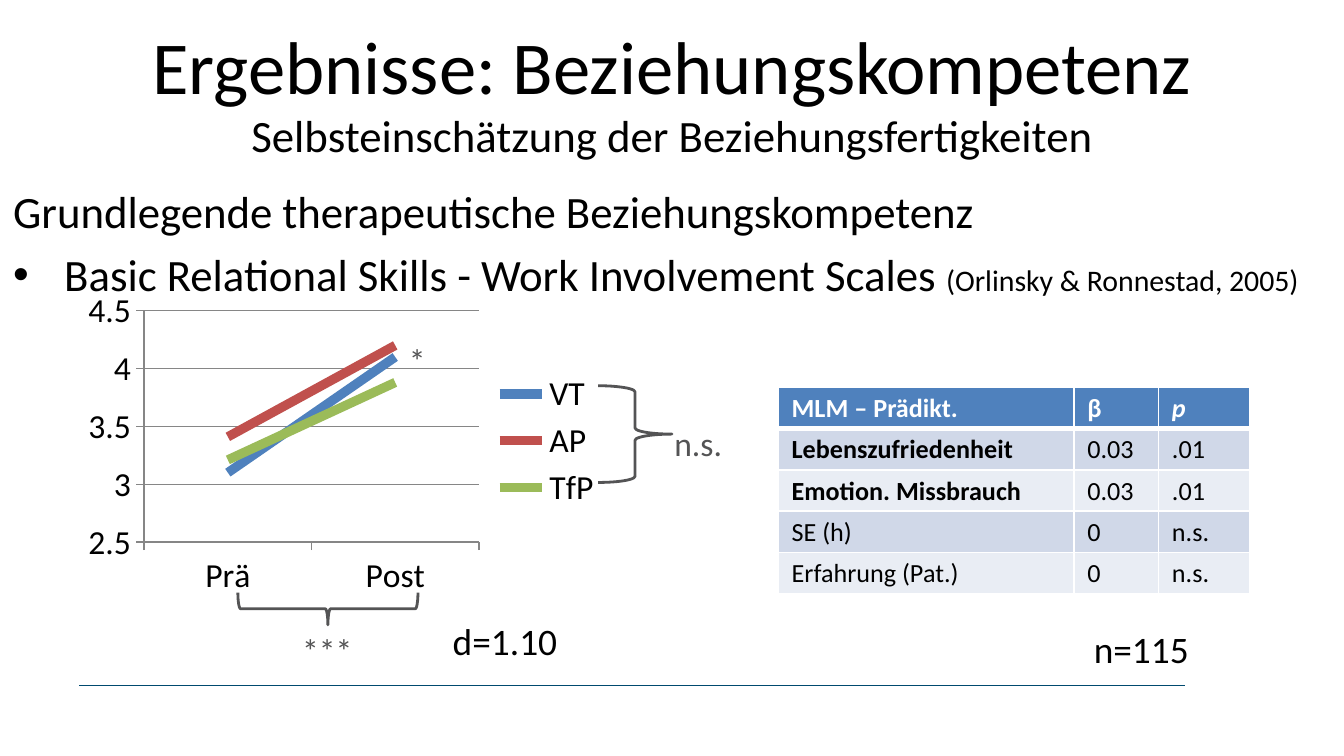
from dataclasses import dataclass

from lxml import etree
from pptx import Presentation
from pptx.chart.data import CategoryChartData
from pptx.dml.color import RGBColor
from pptx.enum.chart import XL_CHART_TYPE, XL_LEGEND_POSITION, XL_MARKER_STYLE, XL_TICK_MARK
from pptx.enum.shapes import MSO_CONNECTOR, MSO_SHAPE
from pptx.enum.text import PP_ALIGN
from pptx.oxml.ns import qn
from pptx.util import Inches, Pt

LINE_CHART = XL_CHART_TYPE.LINE
LEGEND_RIGHT = XL_LEGEND_POSITION.RIGHT
NO_MARKER = XL_MARKER_STYLE.NONE
TICK_OUT = XL_TICK_MARK.OUTSIDE
STRAIGHT = MSO_CONNECTOR.STRAIGHT
RIGHT_BRACE = MSO_SHAPE.RIGHT_BRACE
LEFT, CENTER = PP_ALIGN.LEFT, PP_ALIGN.CENTER


@dataclass(frozen=True)
class Theme:
    font: str = "Calibri"
    black: str = "000000"
    white: str = "FFFFFF"
    grey: str = "545455"
    axis: str = "868686"
    rule: str = "004A6F"
    header: str = "4F81BD"
    bands: tuple = ("D0D8E8", "E9EDF4")
    title: float = 40
    body: float = 24
    note: float = 20
    label: float = 18
    source: float = 16
    table: float = 14


THEME = Theme()


@dataclass(frozen=True)
class Box:
    left: float
    top: float
    width: float
    height: float

    def lengths(self) -> tuple:
        return tuple(Inches(v) for v in (self.left, self.top, self.width, self.height))


@dataclass(frozen=True)
class Phrase:
    text: str
    size: float
    color: str = THEME.black
    new_line: bool = False


@dataclass(frozen=True)
class Label:
    box: Box
    phrase: Phrase
    align: int = CENTER
    wrap: bool = True


@dataclass(frozen=True)
class Brace:
    box: Box
    rotation: float


@dataclass(frozen=True)
class Series:
    name: str
    values: tuple
    color: str


@dataclass(frozen=True)
class Predictor:
    name: str
    beta: str
    p: str
    bold: bool = False


SERIES = (
    Series("VT", (3.1, 4.1), "4F81BD"),
    Series("AP", (3.41, 4.2), "C0504D"),
    Series("TfP", (3.21, 3.88), "9BBB59"),
)
PREDICTORS = (
    Predictor("Lebenszufriedenheit", "0.03", ".01", True),
    Predictor("Emotion. Missbrauch", "0.03", ".01", True),
    Predictor("SE (h)", "0", "n.s."),
    Predictor("Erfahrung (Pat.)", "0", "n.s."),
)
BRACES = (
    Brace(Box(2.32, 3.86, 0.24, 1.34), 90),
    Brace(Box(4.45, 2.87, 0.55, 0.72), 0),
)
LABELS = (
    Label(Box(1.61, 4.64, 1.65, 0.4), Phrase("***", THEME.label, THEME.grey)),
    Label(Box(4.84, 3.1, 0.71, 0.4), Phrase("n.s.", THEME.label, THEME.grey)),
    Label(Box(2.83, 2.48, 0.55, 0.4), Phrase("*", THEME.label, THEME.grey)),
    Label(Box(3.27, 4.55, 0.99, 0.44), Phrase("d=1.10", THEME.note), LEFT, False),
    Label(Box(8.04, 4.61, 1.1, 0.44), Phrase("n=115", THEME.note), LEFT),
)


def rgb(color: str) -> RGBColor:
    return RGBColor.from_string(color)


def apply(target, values: dict) -> None:
    for name, value in values.items():
        setattr(target, name, value)


def style_font(font, size: float, color: str, **extra) -> None:
    apply(font, {"name": THEME.font, "size": Pt(size), **extra})
    font.color.rgb = rgb(color)


def style_line(line, color: str, width: float) -> None:
    line.color.rgb = rgb(color)
    line.width = Pt(width)


def write(paragraph, *phrases: Phrase) -> None:
    for phrase in phrases:
        if phrase.new_line:
            paragraph.add_line_break()
        run = paragraph.add_run()
        run.text = phrase.text
        style_font(run.font, phrase.size, phrase.color)


def add_text_frame(slide, box: Box, wrap: bool = True):
    frame = slide.shapes.add_textbox(*box.lengths()).text_frame
    frame.word_wrap = wrap
    return frame


def add_heading(slide) -> None:
    paragraph = add_text_frame(slide, Box(0.5, 0.15, 9, 0.94)).paragraphs[0]
    apply(paragraph, {"alignment": CENTER, "line_spacing": 0.95})
    write(paragraph, Phrase("Ergebnisse: Beziehungskompetenz", THEME.title),
          Phrase("Selbsteinschätzung der Beziehungsfertigkeiten", THEME.body, new_line=True))


def add_body(slide) -> None:
    frame = add_text_frame(slide, Box(0, 1.32, 10, 3.93))
    write(frame.paragraphs[0], Phrase("Grundlegende therapeutische Beziehungskompetenz", THEME.body))
    scale = frame.add_paragraph()
    scale.space_before = Pt(4.8)
    properties = scale._p.get_or_add_pPr()
    properties.set("marL", str(Inches(0.38)))
    properties.set("indent", str(-Inches(0.38)))
    etree.SubElement(properties, qn("a:buFont"), typeface="Arial")
    etree.SubElement(properties, qn("a:buChar"), char="•")
    write(scale, Phrase("Basic Relational Skills - Work Involvement Scales ", THEME.body),
          Phrase("(Orlinsky & Ronnestad, 2005)", THEME.source))


def place_inside(part, index: int, area: Box, inner: bool = False) -> None:
    for old in part.findall(qn("c:layout")):
        part.remove(old)
    layout = etree.Element(qn("c:layout"))
    manual = etree.SubElement(layout, qn("c:manualLayout"))
    settings = {"layoutTarget": "inner"} if inner else {}
    settings |= {"xMode": "edge", "yMode": "edge", "x": area.left, "y": area.top,
                 "w": area.width, "h": area.height}
    for name, value in settings.items():
        etree.SubElement(manual, qn(f"c:{name}"), val=str(value))
    part.insert(index, layout)


def add_skill_chart(slide, box: Box) -> None:
    data = CategoryChartData()
    data.categories = ("Prä", "Post")
    for series in SERIES:
        data.add_series(series.name, series.values)
    chart = slide.shapes.add_chart(LINE_CHART, *box.lengths(), data).chart
    apply(chart, {"has_title": False, "has_legend": True})
    style_font(chart.font, THEME.label, THEME.black)
    apply(chart.legend, {"position": LEGEND_RIGHT, "include_in_layout": False})
    apply(chart.value_axis, {"minimum_scale": 2.5, "maximum_scale": 4.5, "major_unit": 0.5,
                             "has_major_gridlines": True})
    for axis in (chart.category_axis, chart.value_axis):
        axis.major_tick_mark = TICK_OUT
        style_line(axis.format.line, THEME.axis, 0.75)
    style_line(chart.value_axis.major_gridlines.format.line, THEME.axis, 0.75)
    chart.plots[0].vary_by_categories = False
    for drawn, series in zip(chart.plots[0].series, SERIES):
        drawn.smooth = False
        drawn.marker.style = NO_MARKER
        style_line(drawn.format.line, series.color, 5)
    plot_area = chart._chartSpace.find(".//" + qn("c:plotArea"))
    place_inside(plot_area, 0, Box(0.12, 0.09, 0.62, 0.73), inner=True)
    place_inside(chart.legend._element, 1, Box(0.75, 0.27, 0.23, 0.46))


def add_brace(slide, brace: Brace) -> None:
    shape = slide.shapes.add_shape(RIGHT_BRACE, *brace.box.lengths())
    shape.rotation = brace.rotation
    shape.shadow.inherit = False
    shape.fill.background()
    style_line(shape.line, THEME.grey, 1.5)


def add_label(slide, label: Label) -> None:
    paragraph = add_text_frame(slide, label.box, label.wrap).paragraphs[0]
    paragraph.alignment = label.align
    write(paragraph, label.phrase)


def fill_cell(cell, text: str, fill: str, color: str, top: float, bottom: float, **extra) -> None:
    apply(cell, {"margin_left": Inches(0.1), "margin_right": Inches(0.1),
                 "margin_top": Inches(0.04), "margin_bottom": Inches(0.03)})
    run = cell.text_frame.paragraphs[0].add_run()
    run.text = text
    style_font(run.font, THEME.table, color, **extra)
    properties = cell._tc.get_or_add_tcPr()
    for side, width in {"L": 1, "R": 1, "T": top, "B": bottom}.items():
        border = etree.SubElement(properties, qn(f"a:ln{side}"), w=str(Pt(width)))
        solid = etree.SubElement(border, qn("a:solidFill"))
        etree.SubElement(solid, qn("a:srgbClr"), val=THEME.white)
    cell.fill.solid()
    cell.fill.fore_color.rgb = rgb(fill)


def add_predictor_table(slide, box: Box) -> None:
    table = slide.shapes.add_table(len(PREDICTORS) + 1, 3, *box.lengths()).table
    for column, width in zip(table.columns, (2.2, 0.63, 0.68)):
        column.width = Inches(width)
    for column, text in enumerate(("MLM – Prädikt.", "β", "p")):
        fill_cell(table.cell(0, column), text, THEME.header, THEME.white, 1, 3,
                  bold=True, italic=text == "p")
    for row, predictor in enumerate(PREDICTORS, start=1):
        for column, text in enumerate((predictor.name, predictor.beta, predictor.p)):
            fill_cell(table.cell(row, column), text, THEME.bands[(row - 1) % 2], THEME.black,
                      3 if row == 1 else 1, 1, bold=predictor.bold and column == 0)


def add_rule(slide) -> None:
    rule = slide.shapes.add_connector(STRAIGHT, Inches(0.59), Inches(5.1), Inches(8.82), Inches(5.1))
    style_line(rule.line, THEME.rule, 0.75)
    etree.SubElement(rule._element.spPr, qn("a:effectLst"))


def main() -> None:
    deck = Presentation()
    apply(deck, {"slide_width": Inches(10), "slide_height": Inches(10) * 9 // 16})
    slide = deck.slides.add_slide(deck.slide_layouts[6])
    add_rule(slide)
    add_heading(slide)
    add_body(slide)
    add_skill_chart(slide, Box(0.59, 2.1, 4.02, 2.36))
    for brace in BRACES:
        add_brace(slide, brace)
    add_predictor_table(slide, Box(5.79, 2.88, 3.51, 1.54))
    for label in LABELS:
        add_label(slide, label)
    deck.save("out.pptx")


if __name__ == "__main__":
    main()
